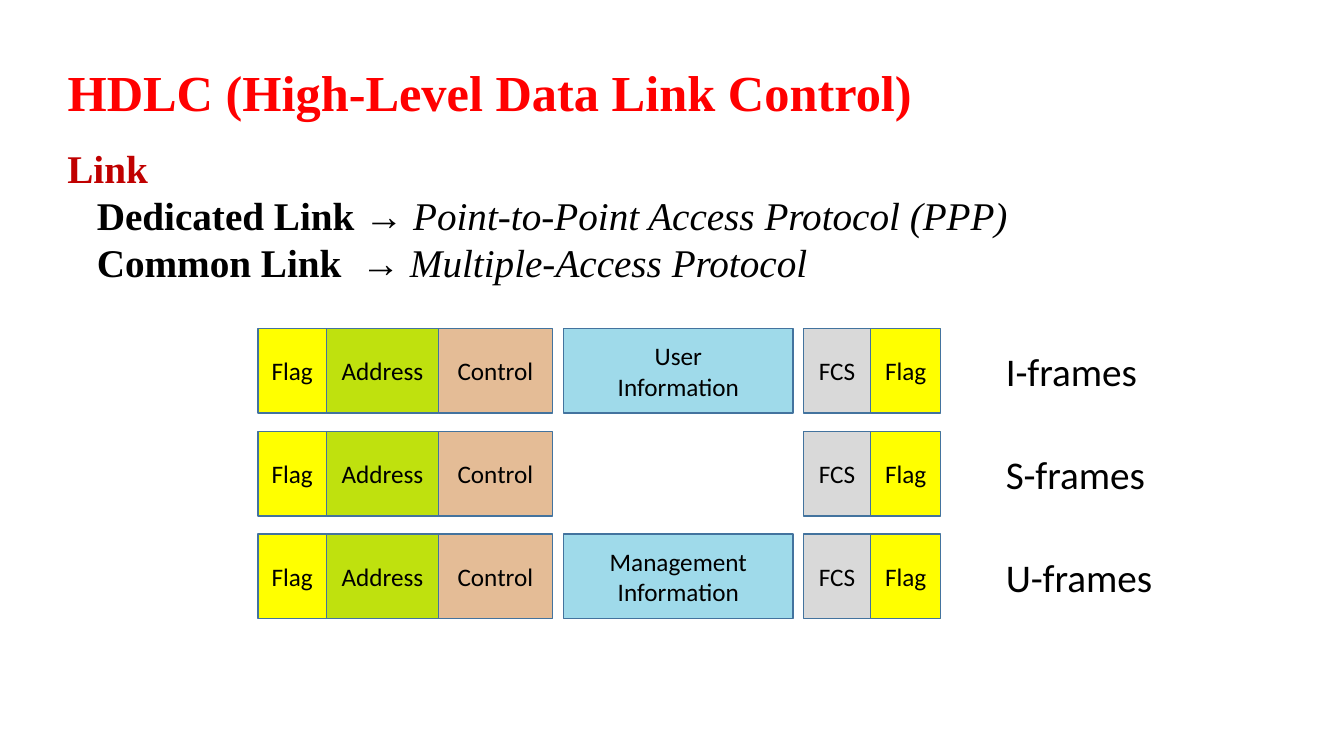
from pptx import Presentation
from pptx.dml.color import RGBColor
from pptx.enum.shapes import MSO_SHAPE
from pptx.enum.text import MSO_ANCHOR, PP_ALIGN
from pptx.util import Cm, Pt

RED = RGBColor(0xFF, 0x00, 0x00)
DARK_RED = RGBColor(0xC0, 0x00, 0x00)
BLACK = RGBColor(0x00, 0x00, 0x00)
YELLOW = RGBColor(0xFF, 0xFF, 0x00)
GREEN = RGBColor(0xBF, 0xE1, 0x0E)
TAN = RGBColor(0xE4, 0xBC, 0x96)
LIGHT_BLUE = RGBColor(0x9F, 0xDA, 0xEA)
GRAY = RGBColor(0xD9, 0xD9, 0xD9)
OUTLINE = RGBColor(0x43, 0x73, 0x9E)
SERIF = "Times New Roman"
SANS = "Calibri"


def format_run(run, name, size, color, bold=False, italic=False):
    font = run.font
    font.name, font.size = name, Pt(size)
    font.bold, font.italic = bold, italic
    font.color.rgb = color


presentation = Presentation()
presentation.slide_width = Cm(33.87)
presentation.slide_height = Cm(19.05)
slide = presentation.slides.add_slide(presentation.slide_layouts[5])

title = slide.shapes.title
title.left, title.top, title.width, title.height = Cm(1.45), Cm(1.35), Cm(24.7), Cm(1.9)
title.text_frame.text = "HDLC (High-Level Data Link Control)"
title.text_frame.vertical_anchor = MSO_ANCHOR.MIDDLE
title_paragraph = title.text_frame.paragraphs[0]
title_paragraph.alignment = PP_ALIGN.LEFT
format_run(title_paragraph.runs[0], SERIF, 36, RED, bold=True)

# Link types and their protocols
links = slide.shapes.add_textbox(Cm(1.45), Cm(3.5), Cm(27), Cm(3.89))
links.text_frame.word_wrap = True
links.text_frame.text = "Link"
format_run(links.text_frame.paragraphs[0].runs[0], SERIF, 28, DARK_RED, bold=True)

for link, protocol in [
    ("Dedicated Link ", "Point-to-Point Access Protocol (PPP)"),
    ("Common Link  ", "Multiple-Access Protocol"),
]:
    paragraph = links.text_frame.add_paragraph()
    properties = paragraph._p.get_or_add_pPr()
    properties.set("marL", str(Cm(0.74)))
    properties.set("indent", "0")
    for text, bold, italic in [
        (link, True, False),
        ("→ ", False, False),
        (protocol, False, True),
    ]:
        run = paragraph.add_run()
        run.text = text
        format_run(run, SERIF, 28, BLACK, bold, italic)

# Frame formats: one row of fields per frame type
FRAME_TOP, FRAME_PITCH, FRAME_HEIGHT = 8.28, 2.59, 2.13
LABEL_LEFT = 25.1
FRAMES = [
    ("I-frames", "User\nInformation"),
    ("S-frames", None),
    ("U-frames", "Management\nInformation"),
]

for row, (frame_name, information) in enumerate(FRAMES):
    top = Cm(FRAME_TOP + row * FRAME_PITCH)
    frame = slide.shapes.add_group_shape()
    fields = [
        ("Flag", 6.5, 1.73, YELLOW),
        ("Address", 8.23, 2.82, GREEN),
        ("Control", 11.05, 2.87, TAN),
        (information, 14.2, 5.79, LIGHT_BLUE),
        ("FCS", 20.25, 1.69, GRAY),
        ("Flag", 21.94, 1.77, YELLOW),
    ]
    for text, left, width, color in fields:
        if text is None:
            continue
        field = frame.shapes.add_shape(
            MSO_SHAPE.RECTANGLE, Cm(left), top, Cm(width), Cm(FRAME_HEIGHT))
        field.shadow.inherit = False
        field.fill.solid()
        field.fill.fore_color.rgb = color
        field.line.color.rgb = OUTLINE
        field.line.width = Pt(1)
        field.text_frame.text = text
        field.text_frame.word_wrap = True
        field.text_frame.vertical_anchor = MSO_ANCHOR.MIDDLE
        for paragraph in field.text_frame.paragraphs:
            paragraph.alignment = PP_ALIGN.CENTER
            format_run(paragraph.runs[0], SANS, 18, BLACK)

    label = frame.shapes.add_textbox(Cm(LABEL_LEFT), top, Cm(4.2), Cm(FRAME_HEIGHT))
    label.text_frame.text = frame_name
    label.text_frame.vertical_anchor = MSO_ANCHOR.MIDDLE
    label.text_frame.word_wrap = True
    format_run(label.text_frame.paragraphs[0].runs[0], SANS, 28, BLACK)

presentation.save("out.pptx")
